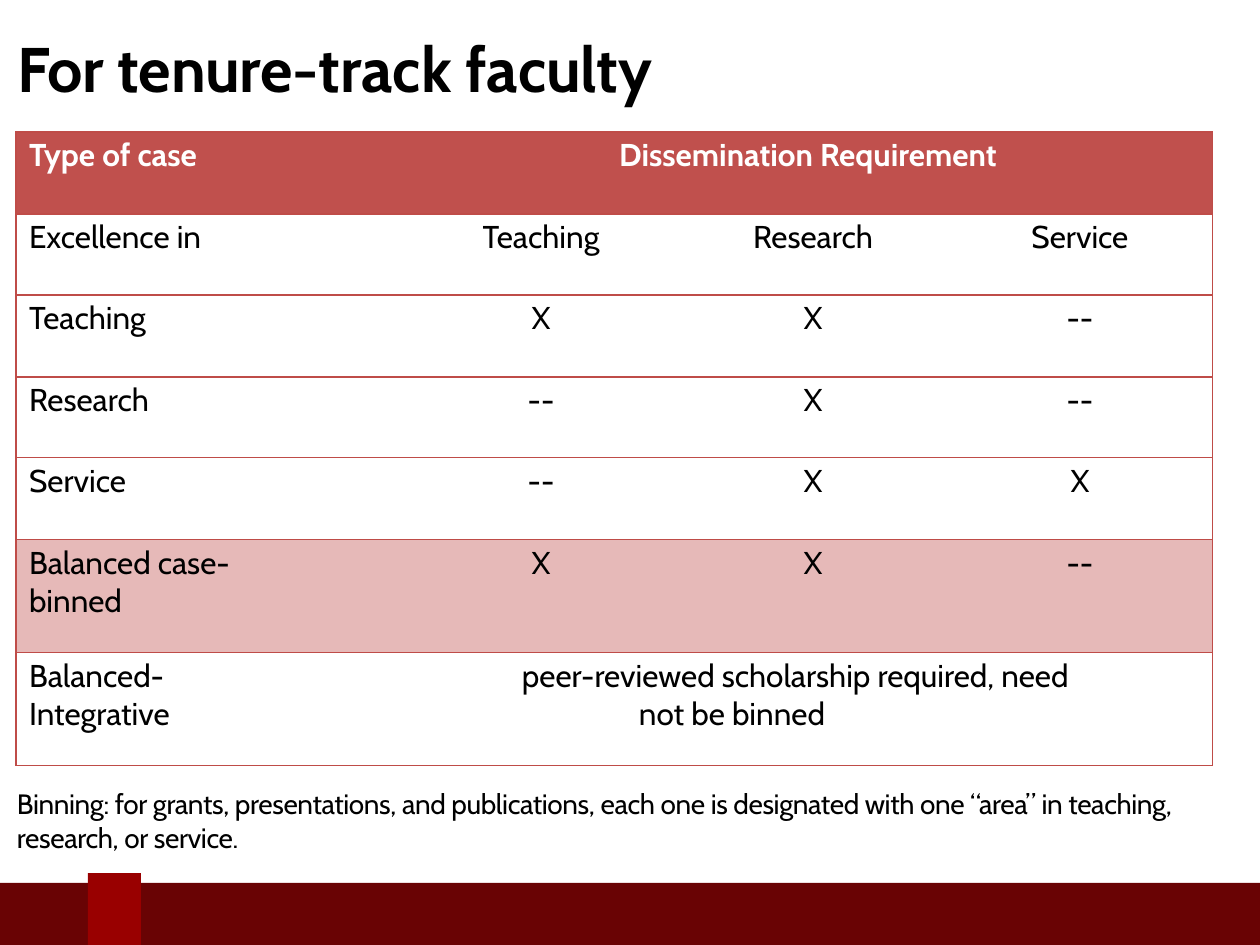
from dataclasses import dataclass

from lxml.etree import SubElement
from pptx import Presentation
from pptx.dml.color import RGBColor
from pptx.enum.shapes import MSO_SHAPE
from pptx.enum.text import MSO_ANCHOR, MSO_AUTO_SIZE, PP_ALIGN
from pptx.oxml.ns import qn
from pptx.util import Emu, Pt

EMU_PER_PX = 914400 / 126
FONT = "Cabin"
BLACK = RGBColor(0x00, 0x00, 0x00)
WHITE = RGBColor(0xFF, 0xFF, 0xFF)
HEADER_RED = RGBColor(0xC0, 0x50, 0x4D)
RULE_RED = RGBColor(0xBF, 0x4C, 0x48)
PINK = RGBColor(0xE6, 0xB9, 0xB8)
MAROON = RGBColor(0x69, 0x03, 0x04)
CRIMSON = RGBColor(0x99, 0x00, 0x00)


def px(length: int) -> Emu:
    return Emu(round(length * EMU_PER_PX))


@dataclass(frozen=True)
class Area:
    left: int
    top: int
    width: int
    height: int

    def emu(self) -> tuple:
        return tuple(px(n) for n in (self.left, self.top, self.width, self.height))


@dataclass(frozen=True)
class Span:
    text: str
    spacing: int = 0  # hundredths of a point


@dataclass(frozen=True)
class Indent:
    left: int = 0
    first: int = 0
    right: int = 0


@dataclass(frozen=True)
class Row:
    height: int
    texts: tuple
    fill: RGBColor | None = None
    color: RGBColor = BLACK
    bold: bool = False


@dataclass(frozen=True)
class Block:
    area: Area
    color: RGBColor


TITLE_AREA = Area(16, 28, 751, 78)
TITLE = (Span("For tenure-", -20), Span("track "), Span("faculty", -10))
NOTE_AREA = Area(16, 785, 1187, 69)
NOTE = (Span("Binning: for grants, presentations, and publications, each one is "
             "designated with one “area” in teaching, research, or service.", -20),)

TABLE_LEFT, TABLE_TOP = 16, 132
COLUMNS = (387, 276, 268, 266)
ROWS = (
    Row(82, ("Type of case", "Dissemination Requirement"), HEADER_RED, WHITE, True),
    Row(81, ("Excellence in", "Teaching", "Research", "Service")),
    Row(82, ("Teaching", "X", "X", "--")),
    Row(81, ("Research", "--", "X", "--")),
    Row(82, ("Service", "--", "X", "X")),
    Row(113, ("Balanced case- binned", "X", "X", "--"), PINK),
    Row(113, ("Balanced- Integrative",
              "peer-reviewed scholarship required, need not be binned")),
)
LABEL_INDENT = Indent(left=13, right=150)
HANGING_INDENT = Indent(left=236, first=-117, right=126)

FOOTER = (
    Block(Area(0, 883, 88, 62), MAROON),
    Block(Area(141, 883, 1119, 62), MAROON),
    Block(Area(88, 873, 53, 72), CRIMSON),
)


def apply(target, values: dict) -> None:
    for name, value in values.items():
        setattr(target, name, value)


def write(frame, spans: tuple, size: int, color: RGBColor, bold: bool,
          align: PP_ALIGN, before: float, indent: Indent) -> None:
    paragraph = frame.paragraphs[0]
    apply(paragraph, {"alignment": align, "space_before": Pt(before)})
    properties = paragraph._p.get_or_add_pPr()
    for name, length in (("marL", indent.left), ("marR", indent.right),
                         ("indent", indent.first)):
        properties.set(name, str(px(length)))
    for span in spans:
        run = paragraph.add_run()
        run.text = span.text
        apply(run.font, {"name": FONT, "size": Pt(size), "bold": bold})
        run.font.color.rgb = color
        if span.spacing:
            run._r.get_or_add_rPr().set("spc", str(span.spacing))


def fill_text_box(box, area: Area, spans: tuple, size: int, bold: bool) -> None:
    apply(box, dict(zip(("left", "top", "width", "height"), area.emu())))
    apply(box.text_frame, {
        "word_wrap": True, "auto_size": MSO_AUTO_SIZE.SHAPE_TO_FIT_TEXT,
        "vertical_anchor": MSO_ANCHOR.MIDDLE, "margin_left": 0,
        "margin_right": 0, "margin_top": px(1), "margin_bottom": 0,
    })
    write(box.text_frame, spans, size, BLACK, bold, PP_ALIGN.LEFT, 1.1, Indent(left=1))


def set_borders(cell, left: bool, right: bool) -> None:
    properties = cell._tc.get_or_add_tcPr()
    for side, visible in (("L", left), ("R", right), ("T", True), ("B", True)):
        line = SubElement(properties, qn(f"a:ln{side}"), w=str(Pt(0.75)))
        if visible:
            solid = SubElement(line, qn("a:solidFill"))
            SubElement(solid, qn("a:srgbClr"), val=str(RULE_RED))
        else:
            SubElement(line, qn("a:noFill"))


def format_cell(cell, row: Row, column: int) -> None:
    set_borders(cell, left=column == 0, right=column == len(COLUMNS) - 1
                or cell.is_merge_origin)
    if row.fill is None:
        cell.fill.background()
    else:
        cell.fill.solid()
        cell.fill.fore_color.rgb = row.fill
    apply(cell, {"margin_left": 0, "margin_right": 0, "margin_top": px(4),
                 "margin_bottom": 0, "vertical_anchor": MSO_ANCHOR.TOP})
    if column >= len(row.texts):
        return
    align, before, indent = PP_ALIGN.CENTER, 2, Indent()
    if column == 0:
        align, indent = PP_ALIGN.LEFT, LABEL_INDENT
    elif row is ROWS[-1]:
        align, before, indent = PP_ALIGN.LEFT, 2.3, HANGING_INDENT
    write(cell.text_frame, (Span(row.texts[column]),), 18, row.color, row.bold,
          align, before, indent)


def draw_table(page) -> None:
    area = Area(TABLE_LEFT, TABLE_TOP, sum(COLUMNS), sum(row.height for row in ROWS))
    table = page.shapes.add_table(len(ROWS), len(COLUMNS), *area.emu()).table
    table.horz_banding = False
    for column, width in zip(table.columns, COLUMNS):
        column.width = px(width)
    for number, row in enumerate(ROWS):
        table.rows[number].height = px(row.height)
        # A row with two texts spreads the second over the other columns
        if len(row.texts) == 2:
            table.cell(number, 1).merge(table.cell(number, len(COLUMNS) - 1))
        for column in range(len(COLUMNS)):
            format_cell(table.cell(number, column), row, column)


def draw_block(page, block: Block) -> None:
    shape = page.shapes.add_shape(MSO_SHAPE.RECTANGLE, *block.area.emu())
    shape.shadow.inherit = False
    shape.fill.solid()
    shape.fill.fore_color.rgb = block.color
    shape.line.fill.background()


def main() -> None:
    deck = Presentation()
    apply(deck, {"slide_width": px(1260), "slide_height": px(945)})
    page = deck.slides.add_slide(deck.slide_layouts[5])

    # Footer band with its plain emblem square
    for block in FOOTER:
        draw_block(page, block)

    # Title, table and explanatory note
    fill_text_box(page.shapes.title, TITLE_AREA, TITLE, 36, True)
    draw_table(page)
    note = page.shapes.add_textbox(*NOTE_AREA.emu())
    fill_text_box(note, NOTE_AREA, NOTE, 16, False)

    deck.save("out.pptx")


if __name__ == "__main__":
    main()
